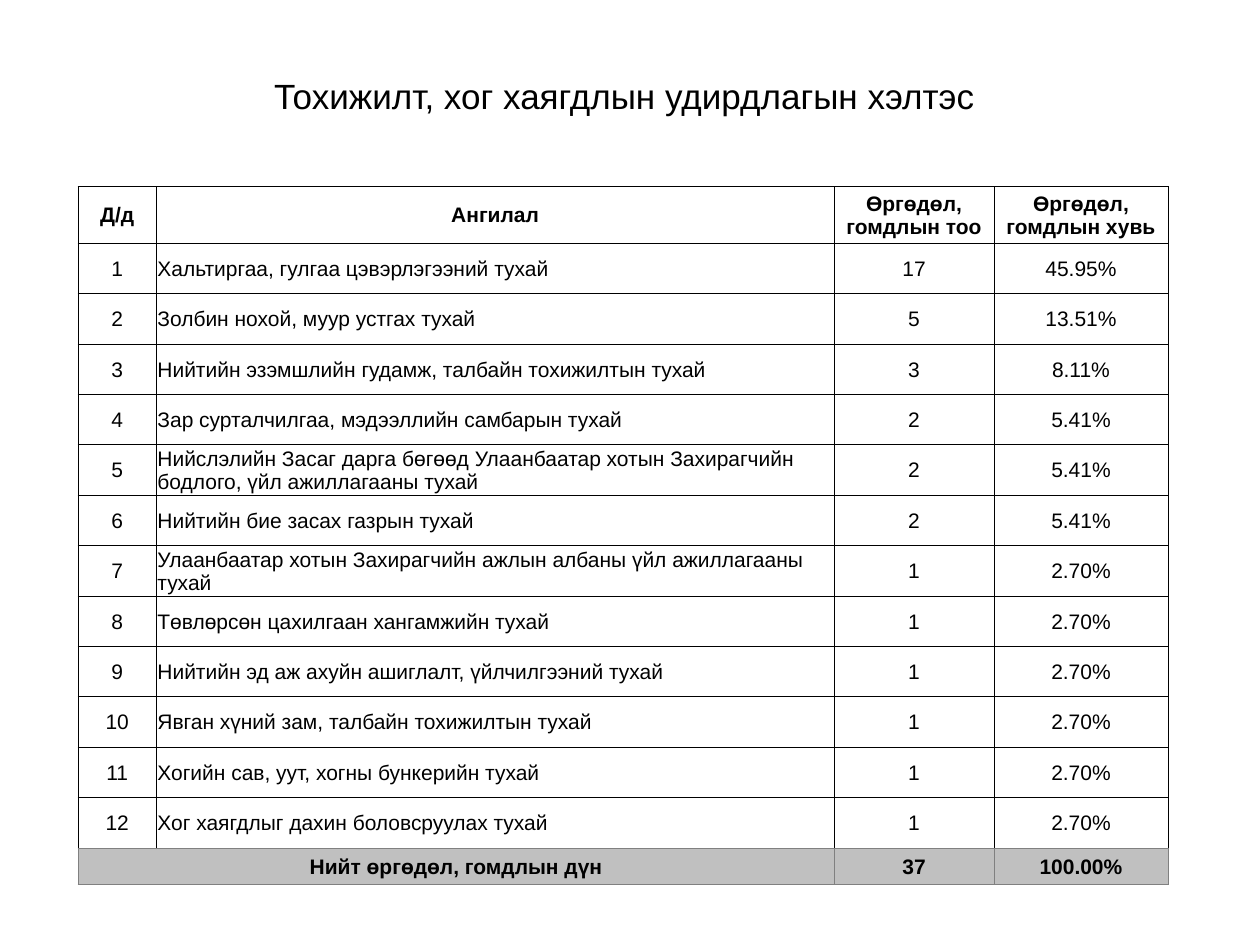
from lxml.etree import SubElement
from pptx import Presentation
from pptx.dml.color import RGBColor
from pptx.enum.text import MSO_ANCHOR, MSO_AUTO_SIZE, PP_ALIGN
from pptx.oxml.ns import qn
from pptx.util import Inches, Pt

BLACK, WHITE, GREY, SILVER = "000000", "FFFFFF", "808080", "C0C0C0"


def color(hex_value):
    return RGBColor.from_string(hex_value)


class SlideBuilder:
    font_name = "Arial"
    title_size = 20
    table_size = 12
    border_width = 0.5
    cell_inset = 0.01

    def __init__(self, slide):
        self.slide = slide

    def text_run(self, paragraph, text, size, bold=False, align=PP_ALIGN.CENTER):
        paragraph.alignment = align
        run = paragraph.add_run()
        run.text = text
        run.font.name = self.font_name
        run.font.size = Pt(size)
        run.font.bold = bold
        run.font.color.rgb = color(BLACK)

    def title(self, text, left, top, width, height, bottom_inset):
        heading = self.slide.shapes.title
        heading.left, heading.top = Inches(left), Inches(top)
        heading.width, heading.height = Inches(width), Inches(height)
        frame = heading.text_frame
        frame.word_wrap = True
        frame.auto_size = MSO_AUTO_SIZE.NONE
        frame.vertical_anchor = MSO_ANCHOR.MIDDLE
        frame.margin_bottom = Inches(bottom_inset)
        frame.paragraphs[0].line_spacing = 0.9
        self.text_run(frame.paragraphs[0], text, self.title_size)

    def table(self, left, top, widths, heights):
        grid = self.slide.shapes.add_table(
            len(heights), len(widths), Inches(left), Inches(top),
            Inches(sum(widths)), Inches(sum(heights))).table
        grid.first_row = grid.horz_banding = False
        for column, width in zip(grid.columns, widths):
            column.width = Inches(width)
        for row, height in zip(grid.rows, heights):
            row.height = Inches(height)
        return grid

    def borders(self, cell, side_colors):
        properties = cell._tc.get_or_add_tcPr()
        for side, hex_value in zip("LRTB", side_colors):
            line = SubElement(properties, qn(f"a:ln{side}"),
                              w=str(Pt(self.border_width)))
            fill = SubElement(line, qn("a:solidFill"))
            SubElement(fill, qn("a:srgbClr"), val=hex_value)

    def cell(self, cell, text, fill, side_colors, bold, align):
        self.borders(cell, side_colors)
        cell.fill.solid()
        cell.fill.fore_color.rgb = color(fill)
        cell.vertical_anchor = MSO_ANCHOR.MIDDLE
        inset = Inches(self.cell_inset)
        cell.margin_left = cell.margin_right = cell.margin_top = inset
        cell.margin_bottom = 0
        if text:
            self.text_run(cell.text_frame.paragraphs[0], text,
                          self.table_size, bold, align)


HEADER = ["Д/д", "Ангилал", "Өргөдөл, гомдлын тоо", "Өргөдөл, гомдлын хувь"]
COMPLAINTS = [
    ("Хальтиргаа, гулгаа цэвэрлэгээний тухай", 17),
    ("Золбин нохой, муур устгах тухай", 5),
    ("Нийтийн эзэмшлийн гудамж, талбайн тохижилтын тухай", 3),
    ("Зар сурталчилгаа, мэдээллийн самбарын тухай", 2),
    ("Нийслэлийн Засаг дарга бөгөөд Улаанбаатар хотын Захирагчийн "
     "бодлого, үйл ажиллагааны тухай", 2),
    ("Нийтийн бие засах газрын тухай", 2),
    ("Улаанбаатар хотын Захирагчийн ажлын албаны үйл ажиллагааны тухай", 1),
    ("Төвлөрсөн цахилгаан хангамжийн тухай", 1),
    ("Нийтийн эд аж ахуйн ашиглалт, үйлчилгээний тухай", 1),
    ("Явган хүний зам, талбайн тохижилтын тухай", 1),
    ("Хогийн сав, уут, хогны бункерийн тухай", 1),
    ("Хог хаягдлыг дахин боловсруулах тухай", 1),
]


def main():
    presentation = Presentation()
    presentation.slide_width, presentation.slide_height = Inches(10), Inches(7.5)
    builder = SlideBuilder(
        presentation.slides.add_slide(presentation.slide_layouts[5]))

    # Title, raised above the middle of its box
    builder.title("Тохижилт, хог хаягдлын удирдлагын хэлтэс",
                  0.89, 0.57, 8.13, 0.71, bottom_inset=0.34)

    # Rows: header, numbered complaints with their shares, total
    total = sum(count for _, count in COMPLAINTS)
    rows = [HEADER]
    for number, (topic, count) in enumerate(COMPLAINTS, 1):
        rows.append([str(number), topic, str(count), f"{count / total:.2%}"])
    rows.append(["Нийт өргөдөл, гомдлын дүн", "", str(total), f"{1:.2%}"])

    # Complaints table
    heights = [0.45] + [0.4] * len(COMPLAINTS) + [0.29]
    complaints = builder.table(0.62, 1.48, [0.62, 5.38, 1.27, 1.38], heights)
    last = len(rows) - 1
    for r, row in enumerate(rows):
        is_total = r == last
        side = GREY if is_total else BLACK
        bottom = GREY if r >= last - 1 else BLACK
        for c, text in enumerate(row):
            is_topic = c == 1 and 0 < r < last
            builder.cell(complaints.cell(r, c), text,
                         fill=SILVER if is_total else WHITE,
                         side_colors=[side, side, side, bottom],
                         bold=r in (0, last),
                         align=PP_ALIGN.LEFT if is_topic else PP_ALIGN.CENTER)
    complaints.cell(last, 0).merge(complaints.cell(last, 1))

    presentation.save("out.pptx")


if __name__ == "__main__":
    main()
